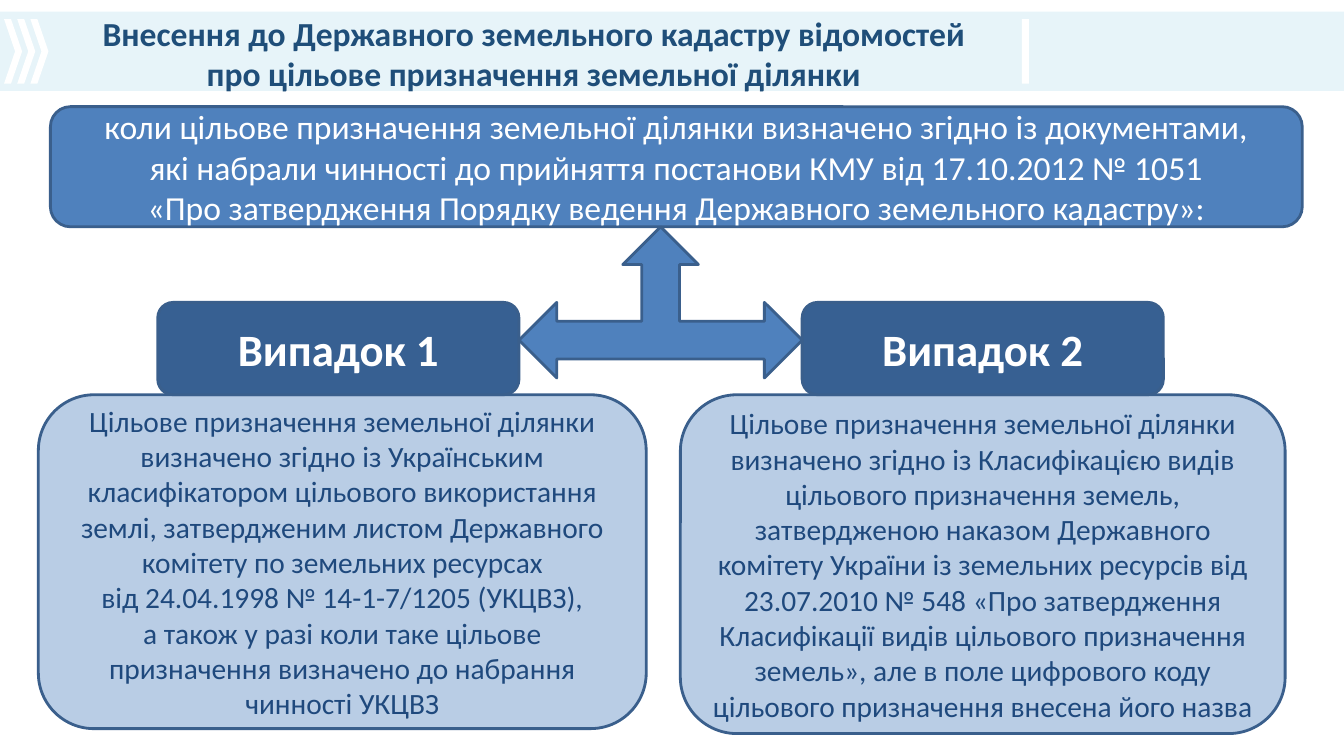
from lxml import etree
from pptx import Presentation
from pptx.dml.color import RGBColor
from pptx.enum import shapes, text
from pptx.oxml import ns
from pptx.util import Pt

WHITE, BLUE, DARK_BLUE, PALE_BLUE = "FFFFFF", "4F81BD", "376092", "B9CDE5"
OUTLINE, BODY_TEXT, TITLE_TEXT, BAND = "3A5F8C", "1F497D", "1F4E79", "DCEFF7"


def paint(shape, fill, line=None):
    shape.shadow.inherit = False
    shape.fill.solid()
    shape.fill.fore_color.rgb = RGBColor.from_string(fill)
    if line:
        shape.line.color.rgb = RGBColor.from_string(line)
        shape.line.width = Pt(2)
    else:
        shape.line.fill.background()


def write(shape, content, size=24, color=WHITE, bold=False):
    """Fill the shape with centred text: one paragraph per line, \\v for a line break."""
    frame = shape.text_frame
    frame.text = content
    frame.word_wrap = True
    frame.auto_size = text.MSO_AUTO_SIZE.NONE
    frame.vertical_anchor = text.MSO_ANCHOR.MIDDLE
    for paragraph in frame.paragraphs:
        paragraph.alignment = text.PP_ALIGN.CENTER
        for run in paragraph.runs:
            run.font.name = "Calibri"
            run.font.size = Pt(size)
            run.font.bold = bold
            run.font.color.rgb = RGBColor.from_string(color)


presentation = Presentation()
presentation.slide_width, presentation.slide_height = Pt(960), Pt(540)
slide = presentation.slides.add_slide(presentation.slide_layouts[5])
preset = shapes.MSO_SHAPE

# Header band with three chevrons and a divider
band = slide.shapes.add_shape(preset.RECTANGLE, Pt(0), Pt(8.4), Pt(960), Pt(56.6))
paint(band, BAND)
band_color = band.fill._xPr.find(".//" + ns.qn("a:srgbClr"))
etree.SubElement(band_color, ns.qn("a:alpha"), val="66000")

top, middle, bottom = 13.7, 36.7, 59.7
for index in range(3):
    left = 2.9 + 9.4 * index
    outline = [(left + 5, top), (left + 12.9, middle), (left + 5, bottom),
               (left, bottom), (left + 7.9, middle)]
    builder = slide.shapes.build_freeform(Pt(left), Pt(top))
    builder.add_line_segments([(Pt(x), Pt(y)) for x, y in outline])
    paint(builder.convert_to_shape(), WHITE)

divider = slide.shapes.add_shape(preset.RECTANGLE, Pt(730), Pt(top), Pt(5), Pt(bottom - top))
paint(divider, WHITE)

# Title, raised above the band
title = slide.shapes.title
title.left, title.top, title.width, title.height = Pt(36), Pt(9.4), Pt(690.5), Pt(56.9)
write(title, "Внесення до Державного земельного кадастру відомостей\v"
             "про цільове призначення земельної ділянки", color=TITLE_TEXT, bold=True)
frame = title.text_frame
frame.margin_left = frame.margin_right = frame.margin_top = frame.margin_bottom = 0
title.element.getparent().append(title.element)

# Condition, the two cases and their headings
condition = ("коли цільове призначення земельної ділянки визначено згідно із документами,\n"
             "які набрали чинності до прийняття постанови КМУ від 17.10.2012 №\u00a01051\n"
             "«Про затвердження Порядку ведення Державного земельного кадастру»:")
first_case = ("Цільове призначення земельної ділянки визначено згідно із Українським "
              "класифікатором цільового використання землі, затвердженим листом Державного "
              "комітету по земельних ресурсах\n"
              "від 24.04.1998 № 14-1-7/1205 (УКЦВЗ),\n"
              "а також у разі коли таке цільове призначення визначено до набрання чинності УКЦВЗ")
second_case = ("Цільове призначення земельної ділянки визначено згідно із Класифікацією видів "
               "цільового призначення земель, затвердженою наказом Державного комітету України "
               "із земельних ресурсів від 23.07.2010 № 548 «Про затвердження Класифікації видів "
               "цільового призначення земель», але в поле цифрового коду цільового призначення "
               "внесена його назва")
case_format = {"size": 21, "color": BODY_TEXT}
heading_format = {"size": 32, "bold": True}
boxes = [
    (36, 76.2, 894.2, 85.8, BLUE, condition, {}),
    (27.4, 282, 434.2, 238.5, PALE_BLUE, first_case, case_format),
    (486, 282, 432, 242, PALE_BLUE, second_case, case_format),
    (112.7, 216, 258, 66, DARK_BLUE, "Випадок 1", heading_format),
    (573, 216, 258, 66, DARK_BLUE, "Випадок 2", heading_format),
]
for left, top, width, height, fill, content, text_format in boxes:
    box = slide.shapes.add_shape(preset.ROUNDED_RECTANGLE, Pt(left), Pt(top), Pt(width), Pt(height))
    paint(box, fill, OUTLINE)
    write(box, content, **text_format)

arrow = slide.shapes.add_shape(preset.LEFT_RIGHT_UP_ARROW, Pt(370.7), Pt(162), Pt(202.3), Pt(108))
paint(arrow, BLUE, OUTLINE)

presentation.save("out.pptx")
